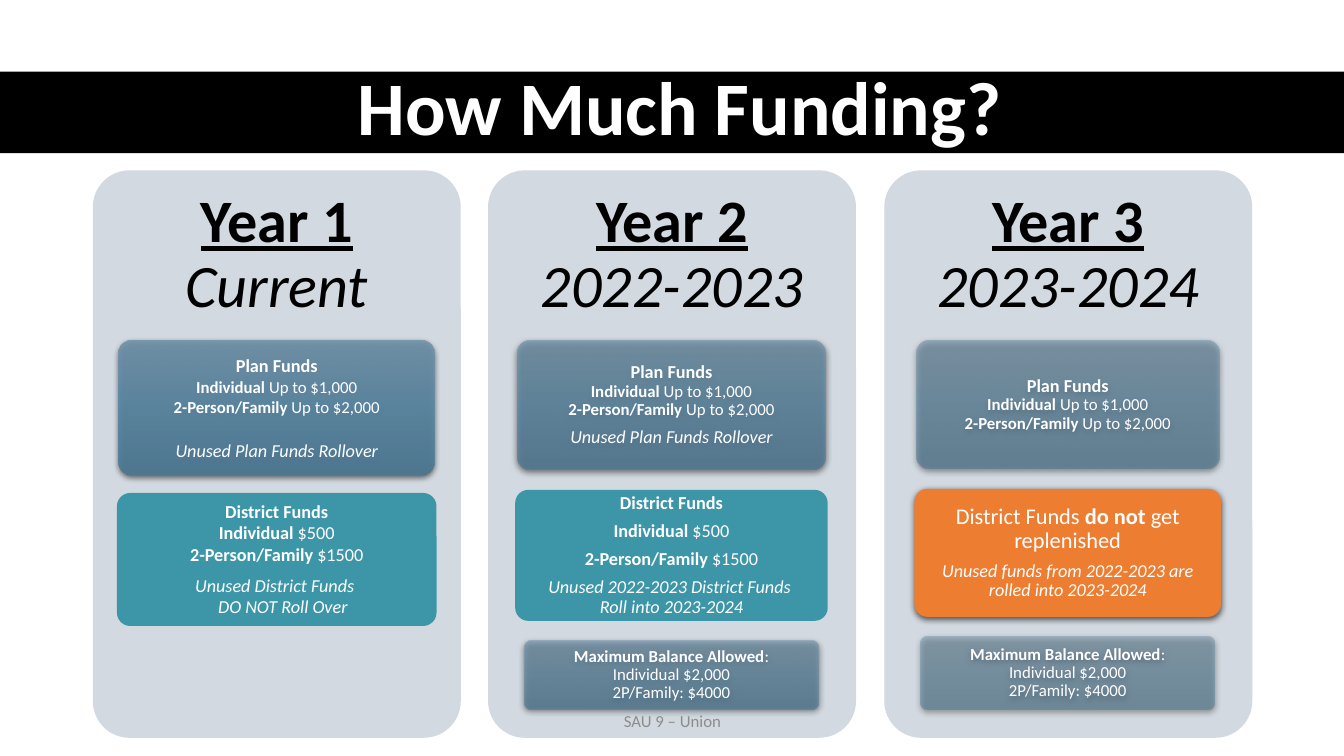
"""Build the three-year funding slide."""
from dataclasses import dataclass

import pptx
import pptx.dml.color
import pptx.enum.shapes
import pptx.enum.text
import pptx.oxml
import pptx.oxml.ns
import pptx.util

PX = 9144
MIDDLE = pptx.enum.text.MSO_ANCHOR.MIDDLE
TOP = pptx.enum.text.MSO_ANCHOR.TOP
RECTANGLE = pptx.enum.shapes.MSO_SHAPE.RECTANGLE
ROUNDED = pptx.enum.shapes.MSO_SHAPE.ROUNDED_RECTANGLE


@dataclass(frozen=True)
class Theme:
    """Colours, font and type sizes."""
    font: str = "Calibri"
    black: str = "000000"
    white: str = "FFFFFF"
    panel: str = "D2D9E0"
    district: str = "3D96A7"
    warning: str = "ED7D31"
    footer: str = "8C8C8C"
    steel: tuple = ((0, "7294AB"), (50, "5A88A4"), (100, "4D7995"))
    title: int = 54
    heading: int = 43
    callout: int = 16
    body: int = 13
    small: int = 12


THEME = Theme()


@dataclass
class Para:
    """A paragraph whose runs are (text, style letters, optional size)."""
    runs: list
    size: int = THEME.body
    spacing: float = 0.9
    after: int = 6
    before: int = 0
    hanging: int = 0


@dataclass
class Card:
    """A rounded card; an opacity selects the steel gradient."""
    width: int
    height: int
    paras: list
    fill: str = ""
    opacity: int = 100
    shadow: bool = True
    anchor: object = MIDDLE


@dataclass
class Year:
    """A column with a heading and stacked cards."""
    name: str
    period: str
    cards: list
    gap: int = 20


PLAN = [("Plan Funds\n", "b", THEME.body), ("Individual ", "b"), ("Up to $1,000\n", ""),
        ("2-Person/Family ", "b"), ("Up to $2,000", "")]
DISTRICT = [[("District Funds", "b")],
            [("Individual ", "b"), ("$500", "")],
            [("2-Person/Family ", "b"), ("$1500", "")]]
ROLLOVER = [("Unused Plan Funds Rollover", "i")]
MAXIMUM = [Para([("Maximum Balance Allowed", "b"),
                 (":\nIndividual $2,000\n2P/Family: $4000", "")], THEME.small, after=4)]

YEARS = [
    Year("Year 1", "Current", [
        Card(313, 133, [Para(PLAN, THEME.small, 1, 0),
                        Para(ROLLOVER, spacing=1, after=0, before=16)], opacity=90),
        Card(317, 132, [
            Para(DISTRICT[0], spacing=1, after=0),
            Para(DISTRICT[1], spacing=1, after=0, hanging=12),
            Para(DISTRICT[2], spacing=1, hanging=12),
            Para([("Unused District Funds \nDO NOT Roll Over", "i")],
                 spacing=1, after=0, hanging=12)],
            THEME.district, shadow=False, anchor=TOP),
    ], gap=18),
    Year("Year 2", "2022-2023", [
        Card(306, 128, [Para(PLAN, THEME.small), Para(ROLLOVER)], opacity=75),
        Card(310, 130, [Para(runs) for runs in DISTRICT] + [
            Para([("Unused 2022-2023 District Funds \nRoll into 2023-2024", "i")])],
            THEME.district, shadow=False),
        Card(292, 68, MAXIMUM, opacity=65),
    ]),
    Year("Year 3", "2023-2024", [
        Card(300, 127, [Para(PLAN, THEME.small, after=4)], opacity=60),
        Card(304, 127, [
            Para([("District Funds ", ""), ("do not ", "b"), ("get replenished", "")],
                 THEME.callout),
            Para([("Unused funds from 2022-2023 are rolled into 2023-2024", "i")], after=5)],
            THEME.warning),
        Card(292, 72, MAXIMUM, opacity=50),
    ]),
]


def rgb(value):
    """Return a colour from its hex value."""
    return pptx.dml.color.RGBColor.from_string(value)


def element(tag, body):
    """Return a DrawingML element from its opening tag and content."""
    namespace = pptx.oxml.ns.nsdecls("a")
    return pptx.oxml.parse_xml(f"<a:{tag} {namespace}>{body}</a:{tag.split()[0]}>")


def colour_xml(value, opacity):
    """Return the markup of a colour with an opacity in percent."""
    return f'<a:srgbClr val="{value}"><a:alpha val="{opacity * 1000}"/></a:srgbClr>'


def write(frame, paras, colour, margins=(4, 3), anchor=MIDDLE):
    """Fill a text frame with centred paragraphs."""
    frame.word_wrap = True
    frame.auto_size = pptx.enum.text.MSO_AUTO_SIZE.NONE
    frame.vertical_anchor = anchor
    frame.margin_left = frame.margin_right = margins[0] * PX
    frame.margin_top = frame.margin_bottom = margins[1] * PX
    for index, para in enumerate(paras):
        paragraph = frame.add_paragraph() if index else frame.paragraphs[0]
        paragraph.alignment = pptx.enum.text.PP_ALIGN.CENTER
        paragraph.line_spacing = para.spacing
        paragraph.space_after = pptx.util.Pt(para.after)
        paragraph.space_before = pptx.util.Pt(para.before)
        paragraph.font.name = THEME.font
        paragraph.font.size = pptx.util.Pt(para.size)
        paragraph.font.color.rgb = rgb(colour)
        if para.hanging:
            properties = paragraph._p.get_or_add_pPr()
            properties.set("marL", str(para.hanging * PX))
            properties.set("indent", str(-para.hanging * PX))
        for text, style, *size in para.runs:
            for number, line in enumerate(text.split("\n")):
                if number:
                    paragraph.add_line_break()
                if not line:
                    continue
                run = paragraph.add_run()
                run.text = line
                font = paragraph.font if len(para.runs) == 1 else run.font
                font.bold = "b" in style
                font.italic = "i" in style
                font.underline = "u" in style
                if size:
                    run.font.size = pptx.util.Pt(size[0])


def add_block(slide, box, colour, preset=ROUNDED):
    """Add a plain filled shape without line or shadow."""
    block = slide.shapes.add_shape(preset, *(length * PX for length in box))
    if preset == ROUNDED:
        block.adjustments[0] = 0.1
    block.shadow.inherit = False
    block.fill.solid()
    block.fill.fore_color.rgb = rgb(colour)
    block.line.fill.background()
    return block


def add_text(slide, box, paras, colour, margins):
    """Add a text box."""
    caption = slide.shapes.add_textbox(*(length * PX for length in box))
    write(caption.text_frame, paras, colour, margins)


def add_banner(slide, box):
    """Place the title over its black band."""
    left, top, width, height = box
    band = add_block(slide, box, THEME.black, RECTANGLE)
    slide.shapes._spTree.insert(2, band._element)
    title = slide.shapes.title
    title.left, title.top = (left + 61) * PX, (top - 1) * PX
    title.width, title.height = (width - 107) * PX, height * PX
    write(title.text_frame, [Para([("How Much Funding?", "b")], THEME.title, after=0)],
          THEME.white, (10, 5))


def add_card(slide, box, card):
    """Draw one funding card."""
    block = add_block(slide, box, card.fill or THEME.panel)
    properties = block._element.spPr
    if not card.fill:
        block.fill.gradient()
        block.fill.gradient_angle = 270
        stops = "".join(f'<a:gs pos="{position * 1000}">{colour_xml(value, card.opacity)}</a:gs>'
                        for position, value in THEME.steel)
        gradient = properties.find(pptx.oxml.ns.qn("a:gradFill"))
        gradient.replace(gradient.find(pptx.oxml.ns.qn("a:gsLst")), element("gsLst", stops))
    if card.shadow:
        effects = properties.find(pptx.oxml.ns.qn("a:effectLst"))
        effects.append(element('outerShdw blurRad="57150" dist="19050" dir="5400000"',
                               colour_xml(THEME.black, 63)))
    write(block.text_frame, card.paras, THEME.white, anchor=card.anchor)


def add_year(slide, box, year):
    """Draw a year's panel, heading and cards, stacked and centred."""
    left, top, width, _ = box
    heading_height = 169
    add_block(slide, box, THEME.panel)
    heading = Para([(year.name + "\n", "bu"), (year.period, "i")], THEME.heading, after=15)
    add_text(slide, (left, top, width, heading_height), [heading], THEME.black, (18, 18))
    card_top = top + heading_height
    for card in year.cards:
        card_left = left + (width - card.width) // 2
        add_card(slide, (card_left, card_top, card.width, card.height), card)
        card_top += card.height + year.gap


def main():
    """Build and save the slide."""
    deck = pptx.Presentation()
    deck.slide_width, deck.slide_height = 1333 * PX, 750 * PX
    slide = deck.slides.add_slide(deck.slide_layouts.get_by_name("Title Only"))
    add_banner(slide, (0, 71, 1333, 81))
    for index, year in enumerate(YEARS):
        add_year(slide, (92 + index * 785 // 2, 169, 365, 563), year)
    add_text(slide, (442, 695, 450, 40),
             [Para([("SAU 9 – Union", "")], THEME.small, 1, 0)], THEME.footer, (10, 5))
    deck.save("out.pptx")


if __name__ == "__main__":
    main()
